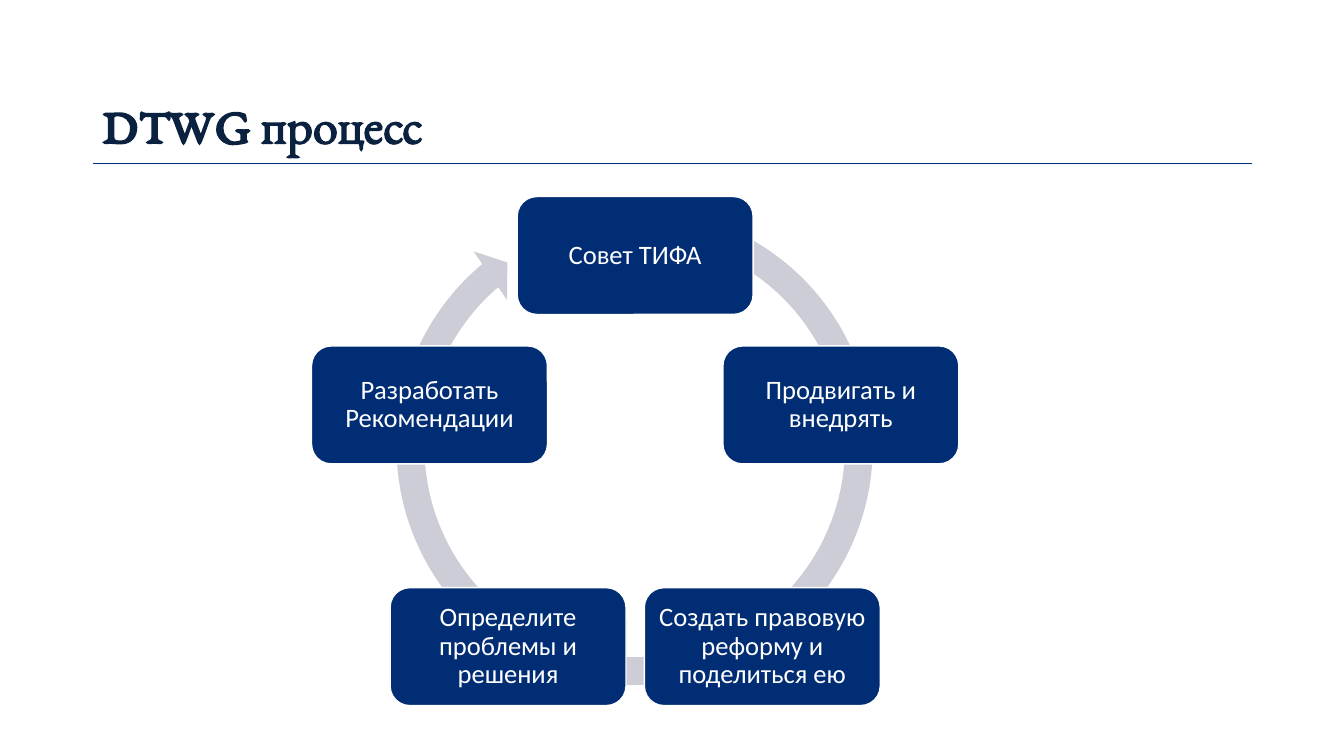
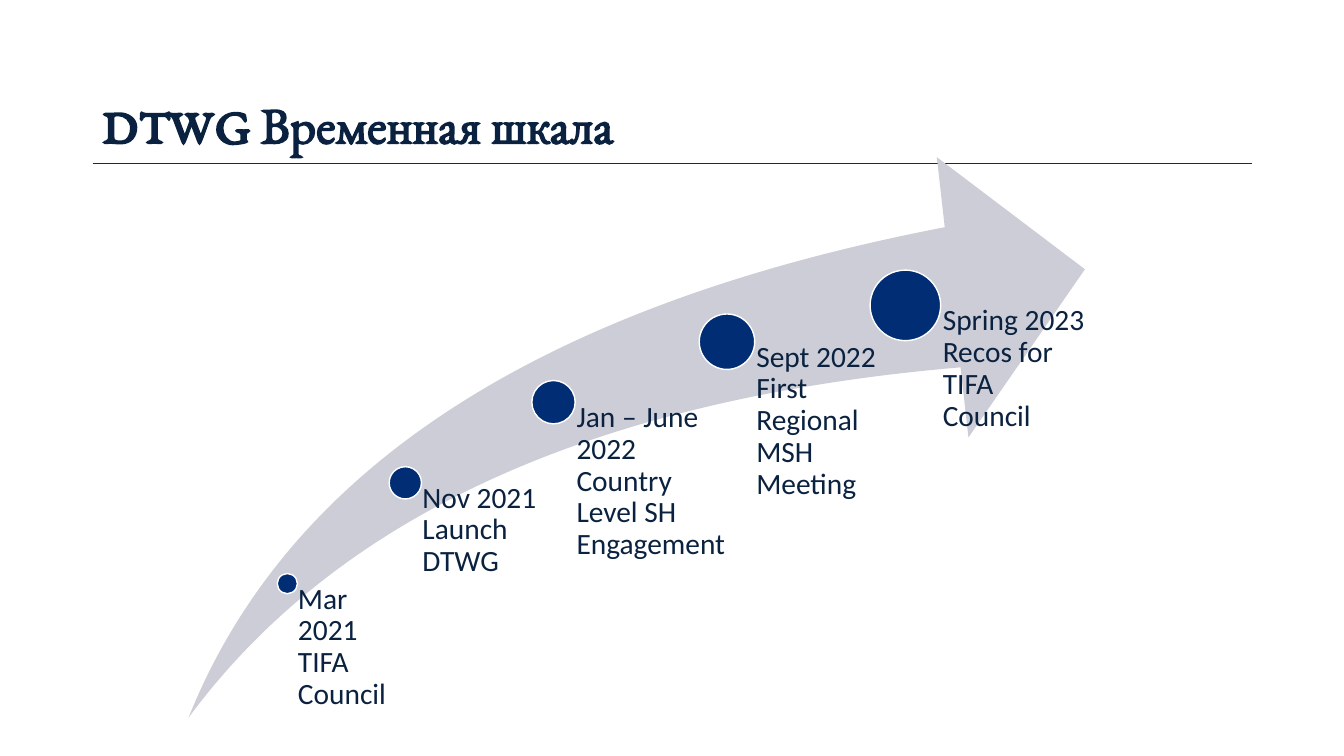
from math import cos, radians, sin

from pptx import Presentation
from pptx.dml.color import RGBColor
from pptx.enum.shapes import MSO_CONNECTOR, MSO_SHAPE
from pptx.enum.text import MSO_ANCHOR, PP_ALIGN
from pptx.oxml.ns import qn
from pptx.util import Inches, Pt

NAVY = RGBColor(0x00, 0x2D, 0x74)
INK = RGBColor(0x0A, 0x22, 0x40)
GREY = RGBColor(0xCC, 0xCD, 0xD6)
WHITE = RGBColor(0xFF, 0xFF, 0xFF)

TITLE_FONT = {"name": "EB Garamond", "size": Pt(36), "bold": True}
CARD_FONT = {"name": "Calibri", "size": Pt(19)}
LABEL_FONT = {"name": "Calibri", "size": Pt(21)}

CYCLE_TITLE = "DTWG процесс"
CYCLE_STEPS = [
    "Совет ТИФА",
    "Продвигать и внедрять",
    "Создать правовую реформу и поделиться ею",
    "Определите проблемы и решения",
    "Разработать Рекомендации",
]
CYCLE_X, CYCLE_Y, CYCLE_RADIUS = 6.3, 4.68, 2.145
CARD_W, CARD_H = 2.34, 1.17
RING_BOX = (3.78, 1.92, 5.03, 5.03)
RING_BAND, RING_HEAD = 0.055, 0.058
RING_ANGLES = (5.51, 229.9, 289.58)
ANGLE_UNIT = 0.6

TIMELINE_TITLE = "DTWG Временная шкала"
SWOOSH_BOX = (1.87, 1.56, 8.89, 5.56)
LABEL_BOTTOM = 7.11
MILESTONES = [
    ("Mar 2021 TIFA Council", 2.85, 5.79, 0.2, 1.16),
    ("Nov 2021 Launch DTWG", 4.02, 4.79, 0.32, 1.48),
    ("Jan – June 2022 Country Level SH Engagement", 5.49, 3.99, 0.43, 1.72),
    ("Sept 2022 First Regional MSH Meeting", 7.21, 3.39, 0.55, 1.78),
    ("Spring 2023 Recos for TIFA Council", 8.98, 3.03, 0.7, 1.78),
]


def write(shape, text, font, color, insets, anchor, align=PP_ALIGN.LEFT):
    tf = shape.text_frame
    tf.word_wrap = True
    tf.vertical_anchor = anchor
    for side, inset in zip(("left", "top", "right", "bottom"), insets):
        setattr(tf, f"margin_{side}", Inches(inset))
    p = tf.paragraphs[0]
    p.alignment = align
    p.line_spacing = 0.9
    r = p.add_run()
    r.text = text
    for name, value in font.items():
        setattr(r.font, name, value)
    r.font.color.rgb = color


def add_text(s, box, *style):
    write(s.shapes.add_textbox(*map(Inches, box)), *style)


def add_shape(s, kind, box, fill, line=None, adjustments=()):
    sp = s.shapes.add_shape(kind, *map(Inches, box))
    sp.shadow.inherit = False
    sp.fill.solid()
    sp.fill.fore_color.rgb = fill
    if line is None:
        sp.line.fill.background()
    else:
        sp.line.color.rgb = line
        sp.line.width = Pt(1)
    for i, value in enumerate(adjustments):
        sp.adjustments[i] = value
    return sp


def add_slide(prs, title):
    s = prs.slides.add_slide(prs.slide_layouts[6])
    rule = s.shapes.add_connector(
        MSO_CONNECTOR.STRAIGHT, *map(Inches, (0.92, 1.62, 12.42, 1.62)))
    rule.line.color.rgb = NAVY
    rule.line.width = Pt(0.5)
    sp_pr = rule._element.spPr
    sp_pr.append(sp_pr.makeelement(qn("a:effectLst"), {}))
    add_text(s, (0.92, 0.86, 11.5, 0.8), title, TITLE_FONT, INK,
             (0.1, 0.05, 0.1, 0.05), MSO_ANCHOR.MIDDLE)
    return s


def centered(x, y, w, h):
    return x - w / 2, y - h / 2, w, h


def build_cycle(prs):
    s = add_slide(prs, CYCLE_TITLE)
    angles = [angle * ANGLE_UNIT for angle in RING_ANGLES]
    add_shape(s, MSO_SHAPE.CIRCULAR_ARROW, RING_BOX, GREY,
              adjustments=(RING_BAND, *angles, RING_HEAD))
    for i, step in enumerate(CYCLE_STEPS):
        turn = radians(360 / len(CYCLE_STEPS) * i)
        x = CYCLE_X + CYCLE_RADIUS * sin(turn)
        y = CYCLE_Y - CYCLE_RADIUS * cos(turn)
        card = add_shape(s, MSO_SHAPE.ROUNDED_RECTANGLE,
                         centered(x, y, CARD_W, CARD_H), NAVY, WHITE)
        write(card, step, CARD_FONT, WHITE, (0.08,) * 4,
              MSO_ANCHOR.MIDDLE, PP_ALIGN.CENTER)


def build_timeline(prs):
    s = add_slide(prs, TIMELINE_TITLE)
    add_shape(s, MSO_SHAPE.SWOOSH_ARROW, SWOOSH_BOX, GREY,
              adjustments=(0.25, 0.25))
    for text, x, y, size, width in MILESTONES:
        add_shape(s, MSO_SHAPE.OVAL, centered(x, y, size, size), NAVY, WHITE)
        add_text(s, (x, y, width, LABEL_BOTTOM - y), text, LABEL_FONT, INK,
                 (size * 0.53, 0, 0, 0), MSO_ANCHOR.TOP)


def main():
    prs = Presentation()
    prs.slide_width, prs.slide_height = Inches(13.33), Inches(7.5)
    build_cycle(prs)
    build_timeline(prs)
    prs.save("out.pptx")


if __name__ == "__main__":
    main()
